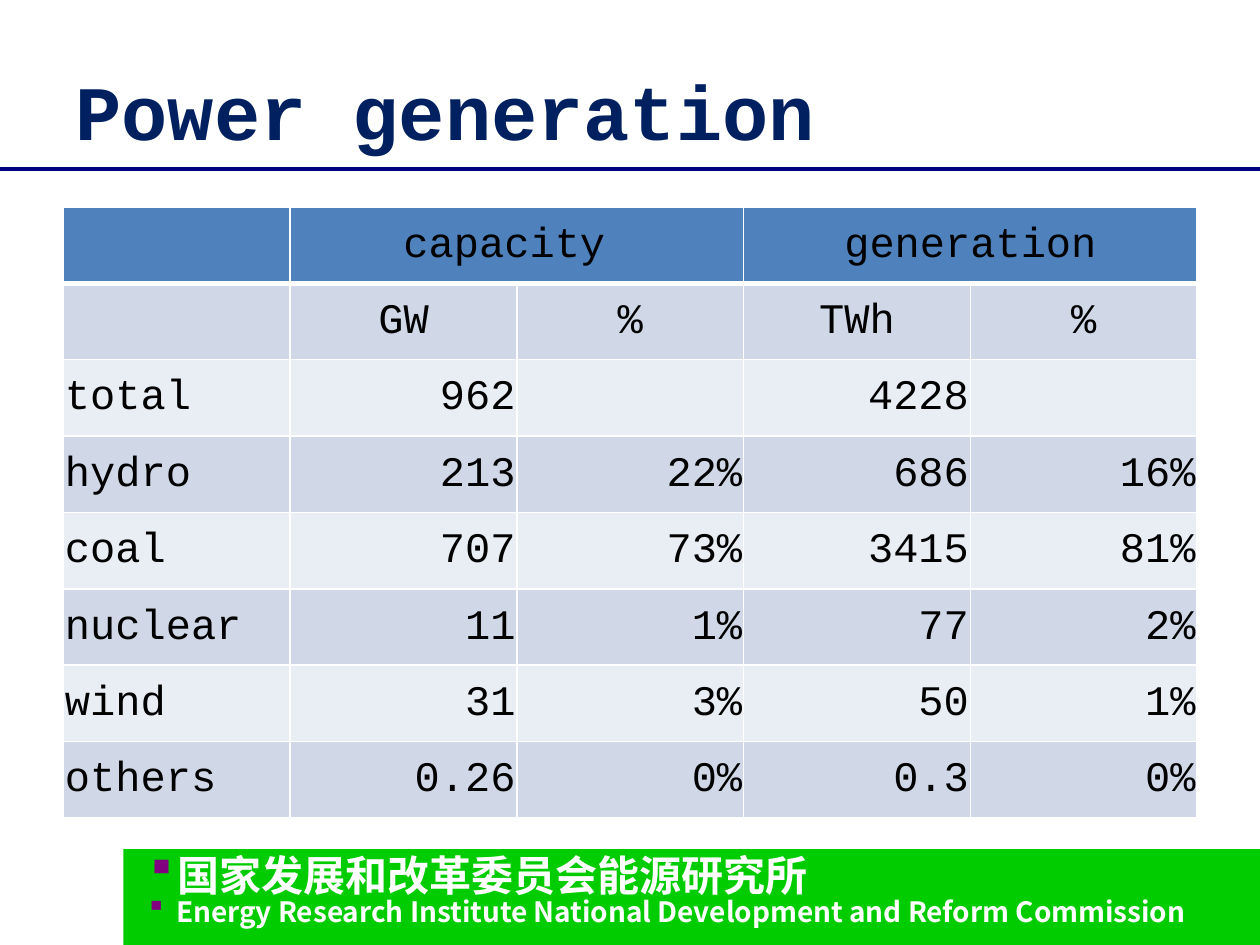
from dataclasses import dataclass

from pptx import Presentation
from pptx.dml.color import RGBColor
from pptx.enum.shapes import MSO_CONNECTOR, MSO_SHAPE
from pptx.enum.text import MSO_ANCHOR, PP_ALIGN
from pptx.oxml.ns import qn
from pptx.util import Cm, Pt
from lxml import etree

LEFT, CENTER, RIGHT = PP_ALIGN.LEFT, PP_ALIGN.CENTER, PP_ALIGN.RIGHT
MIDDLE, TOP = MSO_ANCHOR.MIDDLE, MSO_ANCHOR.TOP
RECTANGLE, STRAIGHT = MSO_SHAPE.RECTANGLE, MSO_CONNECTOR.STRAIGHT

MONO, SANS = "Courier New", "Noto Sans CJK JP"
NAVY, RULE_BLUE, GREEN, PURPLE = "002060", "000082", "00CC00", "800080"
WHITE, BLACK = "FFFFFF", "000000"
HEADER_FILL, BAND_FILLS = "4F81BD", ("D0D8E8", "E9EDF4")

ROWS = [
    ("", "capacity ", "", "generation", ""),
    ("", "GW", "%", "TWh", "%"),
    ("total", "962", "", "4228", ""),
    ("hydro", "213", "22%", "686", "16%"),
    ("coal", "707", "73%", "3415", "81%"),
    ("nuclear", "11", "1%", "77", "2%"),
    ("wind", "31", "3%", "50", "1%"),
    ("others", "0.26", "0%", "0.3", "0%"),
]
HEADING_ROWS = 2
COLUMN_WIDTH, ROW_HEIGHT = Cm(4.57), Cm(1.54)


@dataclass
class Box:
    left: float
    top: float
    width: float
    height: float

    def lengths(self) -> tuple:
        return Cm(self.left), Cm(self.top), Cm(self.width), Cm(self.height)


@dataclass
class FooterLine:
    text: str
    size: float
    space_before: float


FOOTER = [
    FooterLine("国家发展和改革委员会能源研究所", 24, 0),
    FooterLine("Energy Research Institute National Development and Reform Commission", 16, 7),
]


def color(value: str) -> RGBColor:
    return RGBColor.from_string(value)


def apply(target, values: dict) -> None:
    for name, value in values.items():
        setattr(target, name, value)


def add_run(paragraph, text: str, name: str, size: float, ink: str, bold: bool) -> None:
    run = paragraph.add_run()
    run.text = text
    apply(run.font, {"name": name, "size": Pt(size), "bold": bold})
    run.font.color.rgb = color(ink)
    latin = run.font._element.find(qn("a:latin"))
    east_asian = etree.Element(qn("a:ea"), typeface=name)
    latin.addnext(east_asian)


def add_bullet(paragraph, ink: str) -> None:
    properties = paragraph._p.get_or_add_pPr()
    properties.set("marL", str(Cm(0.61)))
    properties.set("indent", str(-Cm(0.61)))
    bullet_color = etree.SubElement(properties, qn("a:buClr"))
    etree.SubElement(bullet_color, qn("a:srgbClr"), val=ink)
    etree.SubElement(properties, qn("a:buChar"), char="▪")


def add_borders(cell, widths: dict) -> None:
    properties = cell._tc.get_or_add_tcPr()
    for side, width in widths.items():
        border = etree.SubElement(properties, qn(f"a:ln{side}"), w=str(Pt(width)))
        fill = etree.SubElement(border, qn("a:solidFill"))
        etree.SubElement(fill, qn("a:srgbClr"), val=WHITE)


def draw_footer(slide) -> None:
    band = slide.shapes.add_shape(RECTANGLE, *Box(2.49, 17.12, 22.91, 1.93).lengths())
    band.shadow.inherit = False
    band.fill.solid()
    band.fill.fore_color.rgb = color(GREEN)
    band.line.fill.background()

    institute = slide.shapes.add_textbox(*Box(2.69, 17.45, 21.89, 1.5).lengths()).text_frame
    apply(institute, {"word_wrap": True, "vertical_anchor": TOP})
    for index, line in enumerate(FOOTER):
        paragraph = institute.add_paragraph() if index else institute.paragraphs[0]
        add_bullet(paragraph, PURPLE)
        apply(paragraph, {"line_spacing": 0.5, "space_before": Pt(line.space_before)})
        add_run(paragraph, line.text, SANS, line.size, WHITE, True)


def draw_title_rule(slide, y: float) -> None:
    rule = slide.shapes.add_connector(STRAIGHT, 0, Cm(y), Cm(25.4), Cm(y))
    rule.line.color.rgb = color(RULE_BLUE)
    rule.line.width = Pt(2)
    etree.SubElement(rule._element.spPr, qn("a:effectLst"))


def draw_title(slide) -> None:
    title = slide.shapes.title
    left, top, width, height = Box(1.27, 0.53, 19.84, 3.35).lengths()
    apply(title, {"left": left, "top": top, "width": width, "height": height})
    apply(title.text_frame, {"vertical_anchor": MIDDLE, "word_wrap": True})
    paragraph = title.text_frame.paragraphs[0]
    paragraph.alignment = LEFT
    add_run(paragraph, "Power generation", MONO, 44, NAVY, True)


def format_cell(cell, text: str, row: int, column: int) -> None:
    add_borders(cell, {"L": 1, "R": 1, "T": 3 if row == 1 else 1, "B": 1 if row else 3})
    cell.fill.solid()
    cell.fill.fore_color.rgb = color(BAND_FILLS[(row - 1) % 2] if row else HEADER_FILL)
    apply(cell, {
        "margin_left": Cm(0.03), "margin_right": Cm(0.03),
        "margin_top": Cm(0.03), "margin_bottom": 0,
        "vertical_anchor": MIDDLE,
    })
    if text:
        paragraph = cell.text_frame.paragraphs[0]
        paragraph.alignment = CENTER if row < HEADING_ROWS else RIGHT if column else LEFT
        add_run(paragraph, text, MONO, 24, BLACK, False)


def draw_power_table(slide) -> None:
    columns = len(ROWS[0])
    table = slide.shapes.add_table(
        len(ROWS), columns, Cm(1.28), Cm(4.17),
        COLUMN_WIDTH * columns, ROW_HEIGHT * len(ROWS),
    ).table
    apply(table, {"first_row": False, "horz_banding": False})
    for column in table.columns:
        column.width = COLUMN_WIDTH
    for row in table.rows:
        row.height = ROW_HEIGHT
    # Each measure spans its value and share columns
    for first in (1, 3):
        table.cell(0, first).merge(table.cell(0, first + 1))
    for row, texts in enumerate(ROWS):
        for column, text in enumerate(texts):
            format_cell(table.cell(row, column), text, row, column)


def main() -> None:
    presentation = Presentation()
    apply(presentation, {"slide_width": Cm(25.4), "slide_height": Cm(19.05)})
    slide = presentation.slides.add_slide(presentation.slide_layouts[5])
    # Page furniture
    draw_footer(slide)
    draw_title_rule(slide, 3.41)
    # Content
    draw_title(slide)
    draw_power_table(slide)
    presentation.save("out.pptx")


if __name__ == "__main__":
    main()
